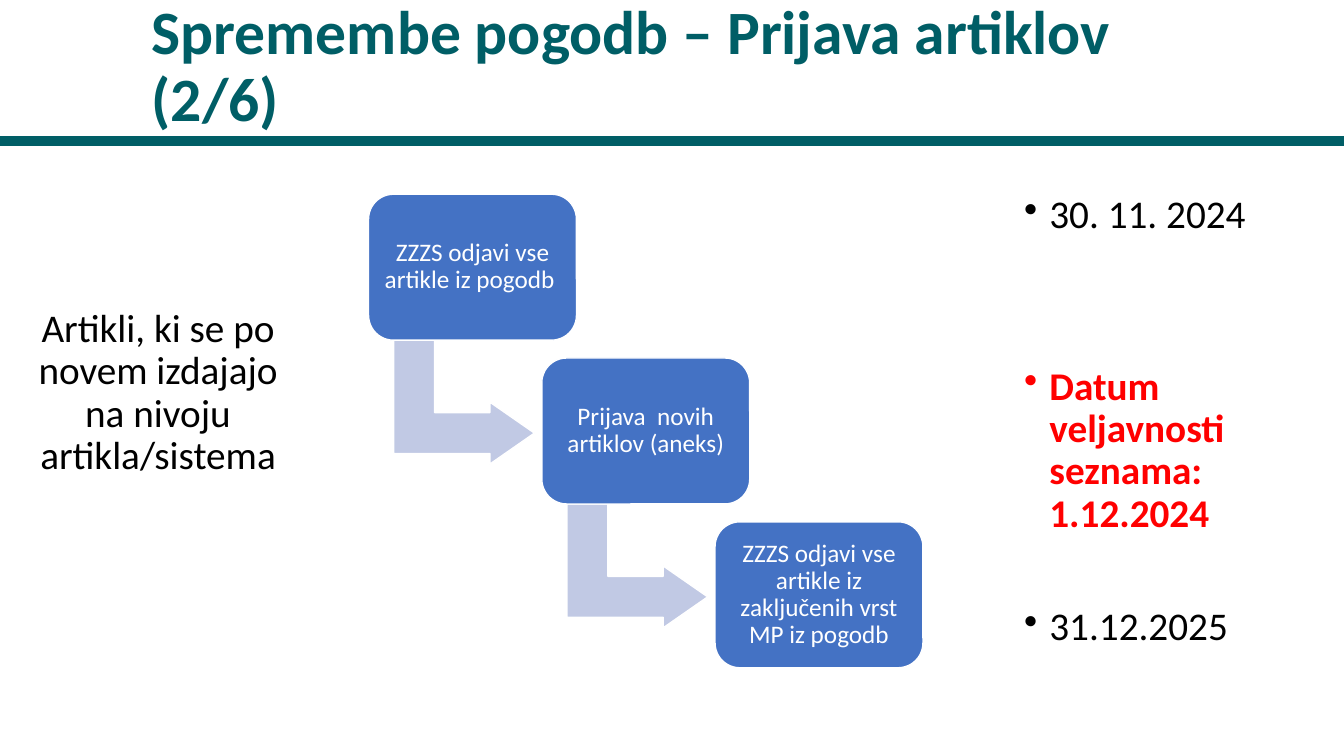
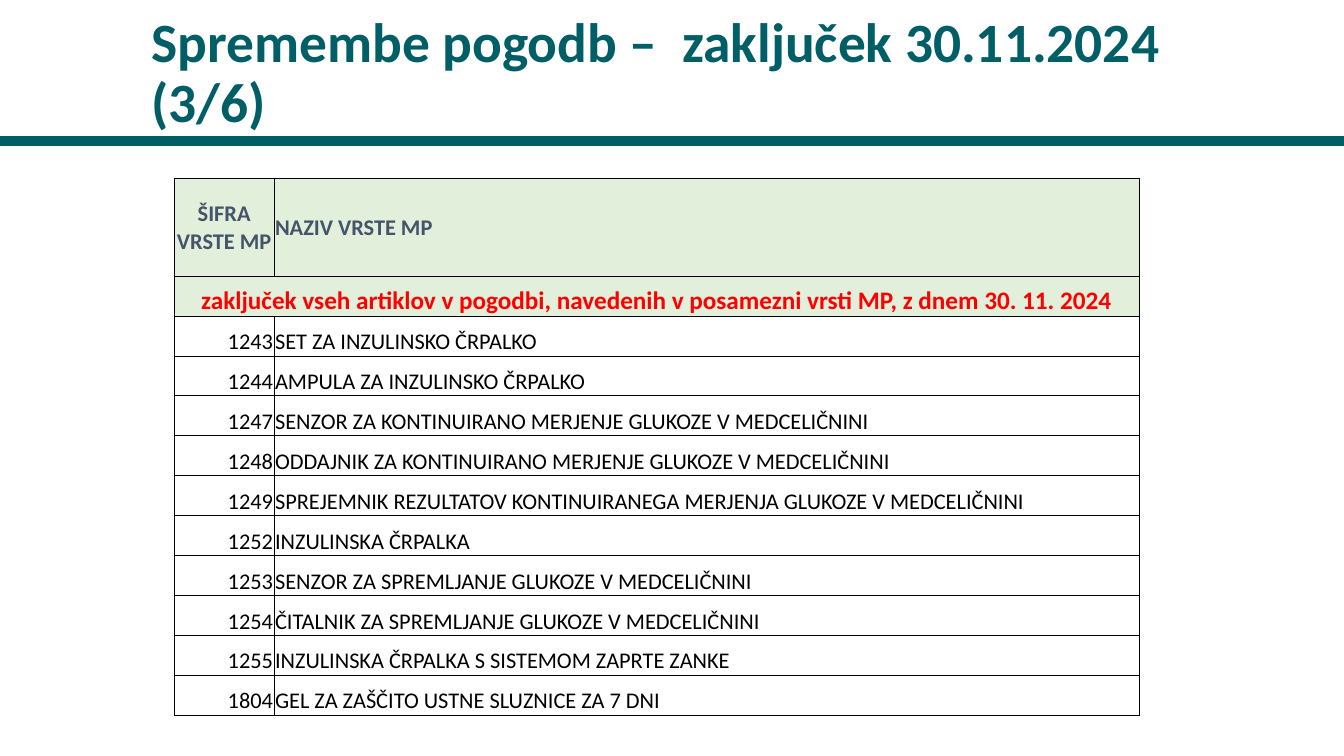
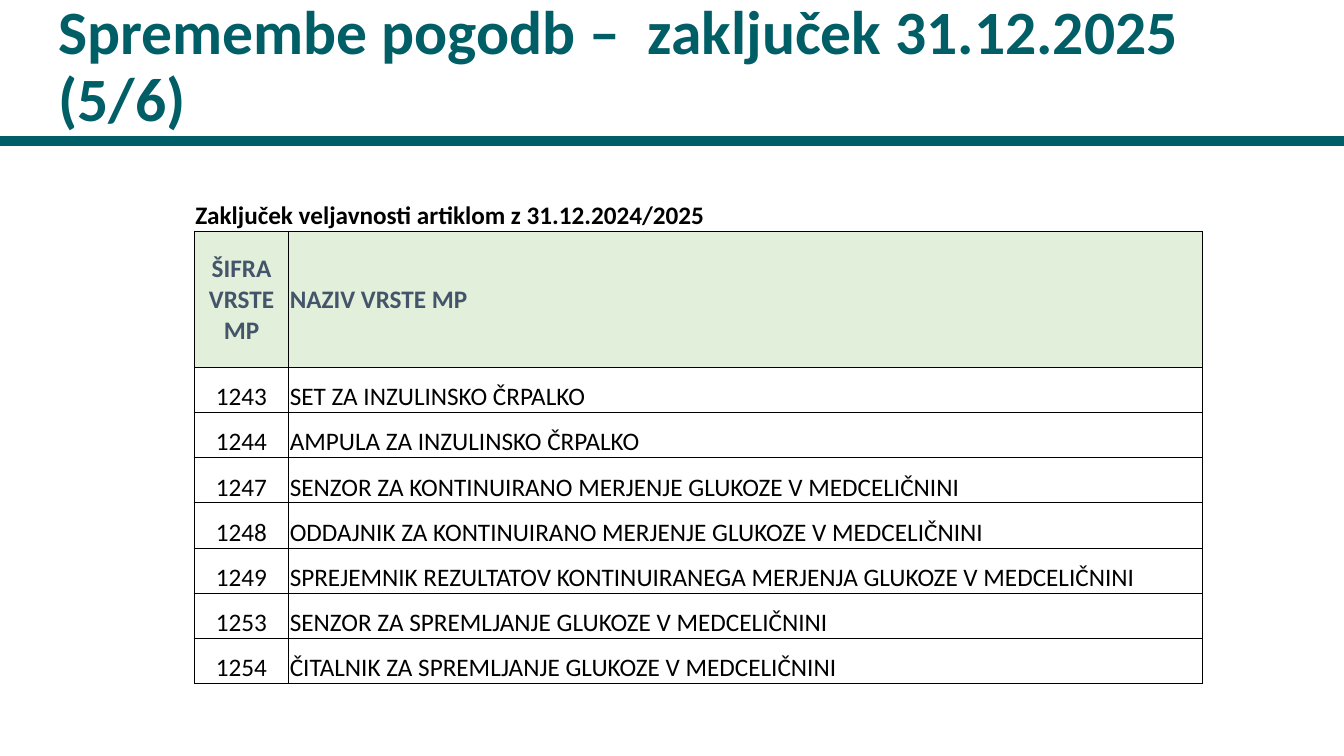
from pptx import Presentation
from pptx.dml.color import RGBColor
from pptx.enum.shapes import MSO_CONNECTOR, MSO_SHAPE
from pptx.enum.text import MSO_ANCHOR, PP_ALIGN
from pptx.oxml.xmlchemy import OxmlElement
from pptx.util import Pt

FONT = "Calibri"
TEAL, BLUE, LAVENDER, GREEN = "005E66", "4472C4", "C1C9E4", "E2EFDA"
SLATE, RED, BLACK, WHITE = "44546A", "FF0000", "000000", "FFFFFF"
SLIDE_W, SLIDE_H = 1280, 720

STEPS = [
    "ZZZS odjavi vse artikle iz pogodb ",
    "Prijava  novih artiklov (aneks)",
    "ZZZS odjavi vse artikle iz zaključenih vrst MP iz pogodb",
]
DATES = [
    ("30. 11. 2024", BLACK, False, 0),
    ("Datum veljavnosti seznama: 1.12.2024", RED, True, 92),
    ("31.12.2025", BLACK, False, 51),
]
HEADINGS = ("ŠIFRA VRSTE MP", "NAZIV VRSTE MP")
TYPES = {
    "1243": "SET ZA INZULINSKO ČRPALKO",
    "1244": "AMPULA ZA INZULINSKO ČRPALKO",
    "1247": "SENZOR ZA KONTINUIRANO MERJENJE GLUKOZE V MEDCELIČNINI",
    "1248": "ODDAJNIK ZA KONTINUIRANO MERJENJE GLUKOZE V MEDCELIČNINI",
    "1249": "SPREJEMNIK REZULTATOV KONTINUIRANEGA MERJENJA GLUKOZE V MEDCELIČNINI",
    "1252": "INZULINSKA ČRPALKA",
    "1253": "SENZOR ZA SPREMLJANJE GLUKOZE V MEDCELIČNINI",
    "1254": "ČITALNIK ZA SPREMLJANJE GLUKOZE V MEDCELIČNINI",
    "1255": "INZULINSKA ČRPALKA S SISTEMOM ZAPRTE ZANKE",
    "1804": "GEL ZA ZAŠČITO USTNE SLUZNICE ZA 7 DNI",
}
CLOSING_2025 = ["1243", "1244", "1247", "1248", "1249", "1253", "1254"]


def px(n):
    return n * 9525


def rgb(color):
    return RGBColor.from_string(color)


def style(p, size, color, bold=False, align=PP_ALIGN.LEFT, spacing=0.9):
    p.alignment = align
    p.line_spacing = spacing
    for r in p.runs:
        r.font.name = FONT
        r.font.size = Pt(size)
        r.font.bold = bold
        r.font.color.rgb = rgb(color)


def add_bullet(p):
    pPr = p._p.get_or_add_pPr()
    pPr.set("marL", str(px(24)))
    pPr.set("indent", str(-px(24)))
    bullet = OxmlElement("a:buChar")
    bullet.set("char", "•")
    pPr.append(bullet)


def add_box(s, x, y, w, h, anchor=MSO_ANCHOR.TOP):
    tf = s.shapes.add_textbox(px(x), px(y), px(w), px(h)).text_frame
    tf.word_wrap = True
    tf.vertical_anchor = anchor
    return tf


def add_slide(prs, title, x, w, size=44):
    s = prs.slides.add_slide(prs.slide_layouts[6])
    band = s.shapes.add_connector(MSO_CONNECTOR.STRAIGHT, 0, px(134), px(SLIDE_W), px(134))
    band.line.color.rgb = rgb(TEAL)
    band.line.width = Pt(7)
    band._element.spPr.append(OxmlElement("a:effectLst"))
    tf = add_box(s, x, 14, w, 119, MSO_ANCHOR.BOTTOM)
    tf.text = title
    style(tf.paragraphs[0], size, TEAL, True)
    return s


def add_preset(s, kind, x, y, w, h, fill, adjustments):
    sp = s.shapes.add_shape(kind, px(x), px(y), px(w), px(h))
    sp.shadow.inherit = False
    sp.fill.solid()
    sp.fill.fore_color.rgb = rgb(fill)
    sp.line.color.rgb = rgb(WHITE)
    sp.line.width = Pt(1)
    for i, value in enumerate(adjustments):
        sp.adjustments[i] = value
    return sp


def add_step(s, text, x, y, has_next):
    if has_next:
        arrow = add_preset(s, MSO_SHAPE.BENT_UP_ARROW, x + 32, y + 131, 118, 134,
                           LAVENDER, (0.33, 0.25, 0.36))
        arrow.rotation = 90
    step = add_preset(s, MSO_SHAPE.ROUNDED_RECTANGLE, x, y, 198, 139, BLUE, (0.17,))
    tf = step.text_frame
    tf.word_wrap = True
    tf.vertical_anchor = MSO_ANCHOR.MIDDLE
    tf.margin_left = tf.margin_right = tf.margin_top = tf.margin_bottom = px(7)
    tf.text = text
    style(tf.paragraphs[0], 18, WHITE, align=PP_ALIGN.CENTER)


def set_borders(cell, sides):
    tcPr = cell._tc.get_or_add_tcPr()
    for side in "LRTB":
        ln = OxmlElement(f"a:ln{side}")
        if side in sides:
            ln.set("w", str(Pt(0.5)))
            fill = OxmlElement("a:solidFill")
            color = OxmlElement("a:srgbClr")
            color.set("val", BLACK)
            fill.append(color)
        else:
            fill = OxmlElement("a:noFill")
        ln.append(fill)
        tcPr.append(ln)


def fill_cell(cell, text, size, color=BLACK, bold=False, align=PP_ALIGN.LEFT,
              anchor=MSO_ANCHOR.BOTTOM, fill=None, sides="LRTB"):
    cell.margin_left = cell.margin_right = cell.margin_top = px(1)
    cell.margin_bottom = 0
    cell.vertical_anchor = anchor
    set_borders(cell, sides)
    if fill:
        cell.fill.solid()
        cell.fill.fore_color.rgb = rgb(fill)
    else:
        cell.fill.background()
    if text:
        cell.text = text
        style(cell.text_frame.paragraphs[0], size, color, bold, align, 1.0)


def add_table(s, x, y, widths, heights):
    frame = s.shapes.add_table(len(heights), len(widths), px(x), px(y),
                               px(sum(widths)), px(sum(heights)))
    table = frame.table
    table.first_row = table.horz_banding = False
    for column, width in zip(table.columns, widths):
        column.width = px(width)
    for row, height in zip(table.rows, heights):
        row.height = px(height)
    return table


def fill_headings(table, row, size):
    for i, align in enumerate((PP_ALIGN.CENTER, PP_ALIGN.LEFT)):
        fill_cell(table.cell(row, i), HEADINGS[i], size, SLATE, True, align,
                  MSO_ANCHOR.MIDDLE, GREEN)


def fill_span(table, row, text, **look):
    table.cell(row, 0).merge(table.cell(row, 1))
    for i, part in enumerate((text, "")):
        fill_cell(table.cell(row, i), part, 18, bold=True, **look)


def fill_types(table, codes, size, align):
    for row, code in enumerate(codes, 2):
        fill_cell(table.cell(row, 0), code, size, align=align)
        fill_cell(table.cell(row, 1), TYPES[code], size)


def build_steps(prs):
    s = add_slide(prs, "Spremembe pogodb – Prijava artiklov (2/6)", 135, 1057)
    tf = add_box(s, 16, 181, 269, 457)
    tf.margin_top = px(113)
    tf.text = "Artikli, ki se po novem izdajajo na nivoju artikla/sistema"
    style(tf.paragraphs[0], 28, BLACK, align=PP_ALIGN.CENTER)
    for i, text in enumerate(STEPS):
        add_step(s, text, 351 + 165 * i, 185 + 156 * i, i < len(STEPS) - 1)
    tf = add_box(s, 966, 181, 299, 457)
    for i, (text, color, bold, before) in enumerate(DATES):
        p = tf.add_paragraph() if i else tf.paragraphs[0]
        p.text = text
        add_bullet(p)
        style(p, 28, color, bold)
        if before:
            p.space_before = Pt(before)


def build_closing_2024(prs):
    s = add_slide(prs, "Spremembe pogodb –  zaključek 30.11.2024 (3/6)", 135, 1073, 39.6)
    table = add_table(s, 166, 170, [95, 824], [93] + [38] * (len(TYPES) + 1))
    fill_headings(table, 0, 16)
    fill_span(table, 1, "zaključek vseh artiklov v pogodbi, navedenih v posamezni vrsti MP, "
              "z dnem 30. 11. 2024", color=RED, align=PP_ALIGN.CENTER, fill=GREEN)
    fill_types(table, TYPES, 16, PP_ALIGN.RIGHT)


def build_closing_2025(prs):
    s = add_slide(prs, "Spremembe pogodb –  zaključek 31.12.2025 (5/6)", 46, 1206)
    table = add_table(s, 185, 177, [90, 870], [43, 130] + [43] * len(CLOSING_2025))
    fill_span(table, 0, "Zaključek veljavnosti artiklom z 31.12.2024/2025", fill=WHITE, sides="B")
    fill_headings(table, 1, 18)
    fill_types(table, CLOSING_2025, 18, PP_ALIGN.CENTER)


def main():
    prs = Presentation()
    prs.slide_width = px(SLIDE_W)
    prs.slide_height = px(SLIDE_H)
    build_steps(prs)
    build_closing_2024(prs)
    build_closing_2025(prs)
    prs.save("out.pptx")


if __name__ == "__main__":
    main()
